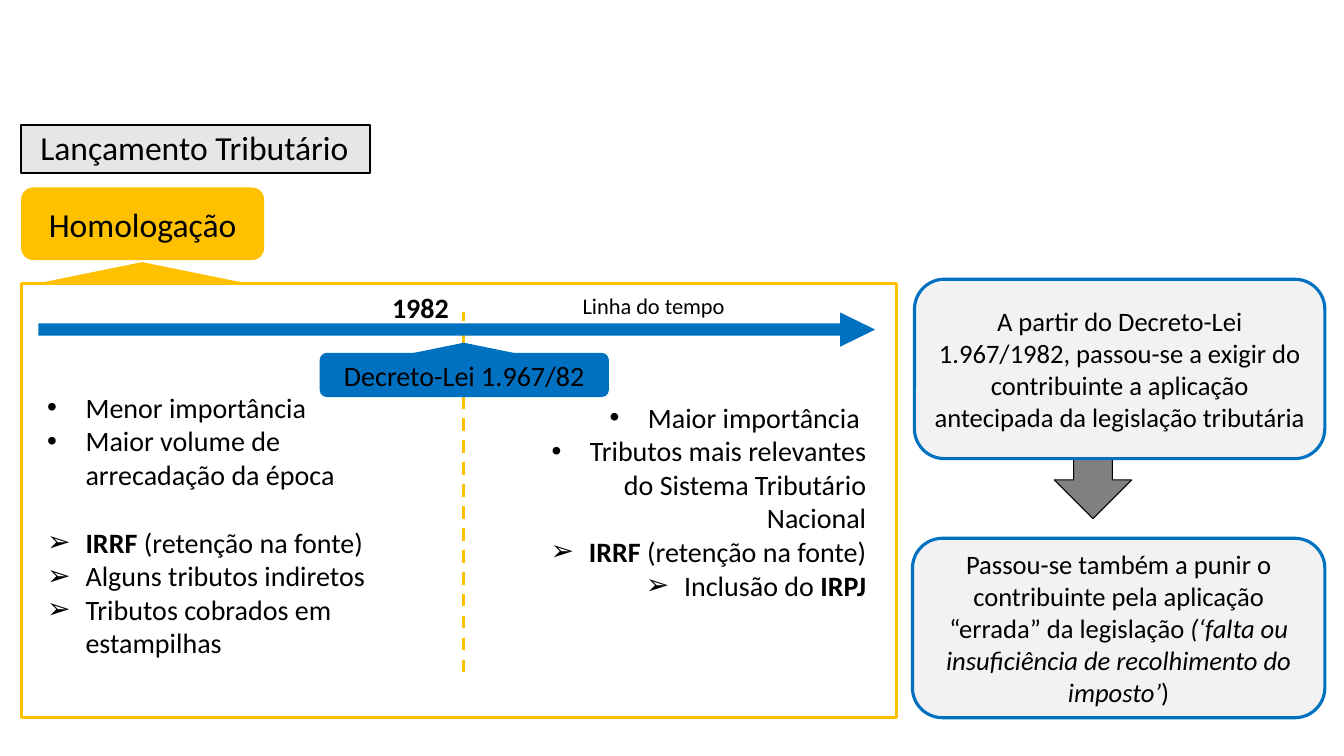
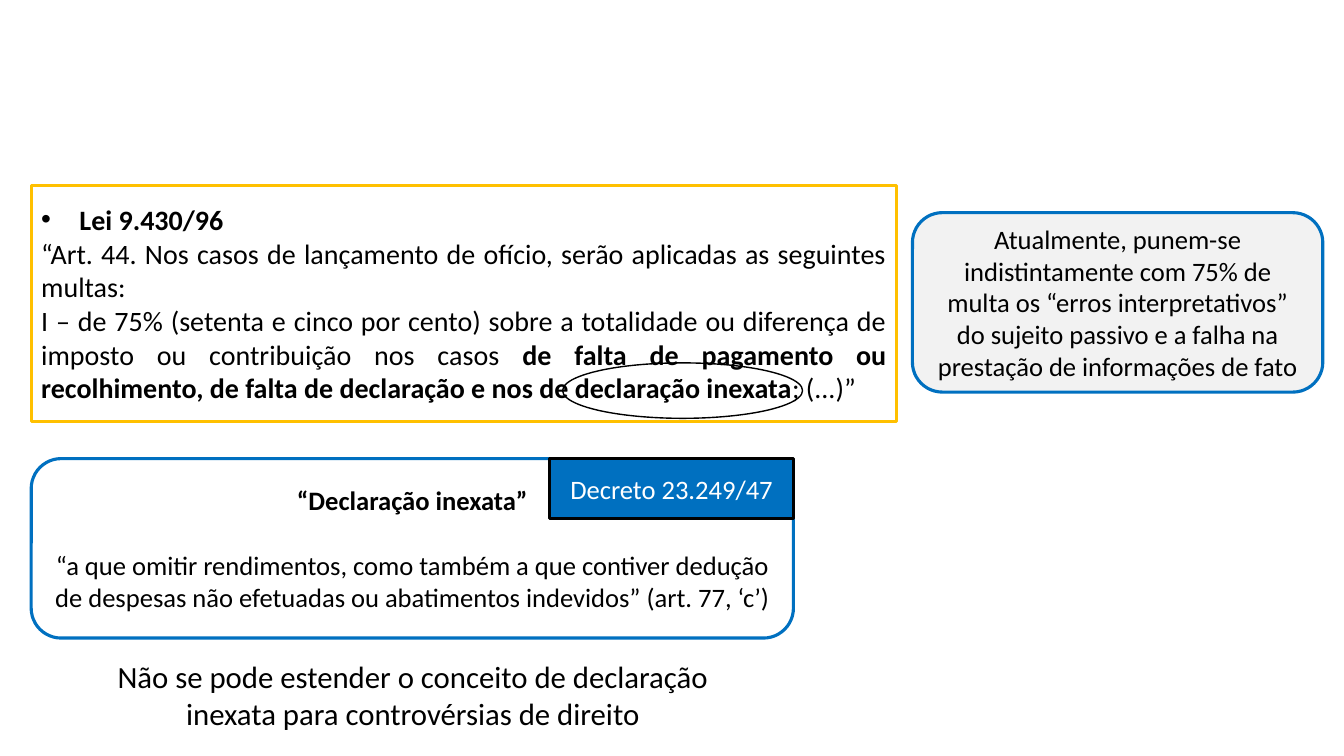
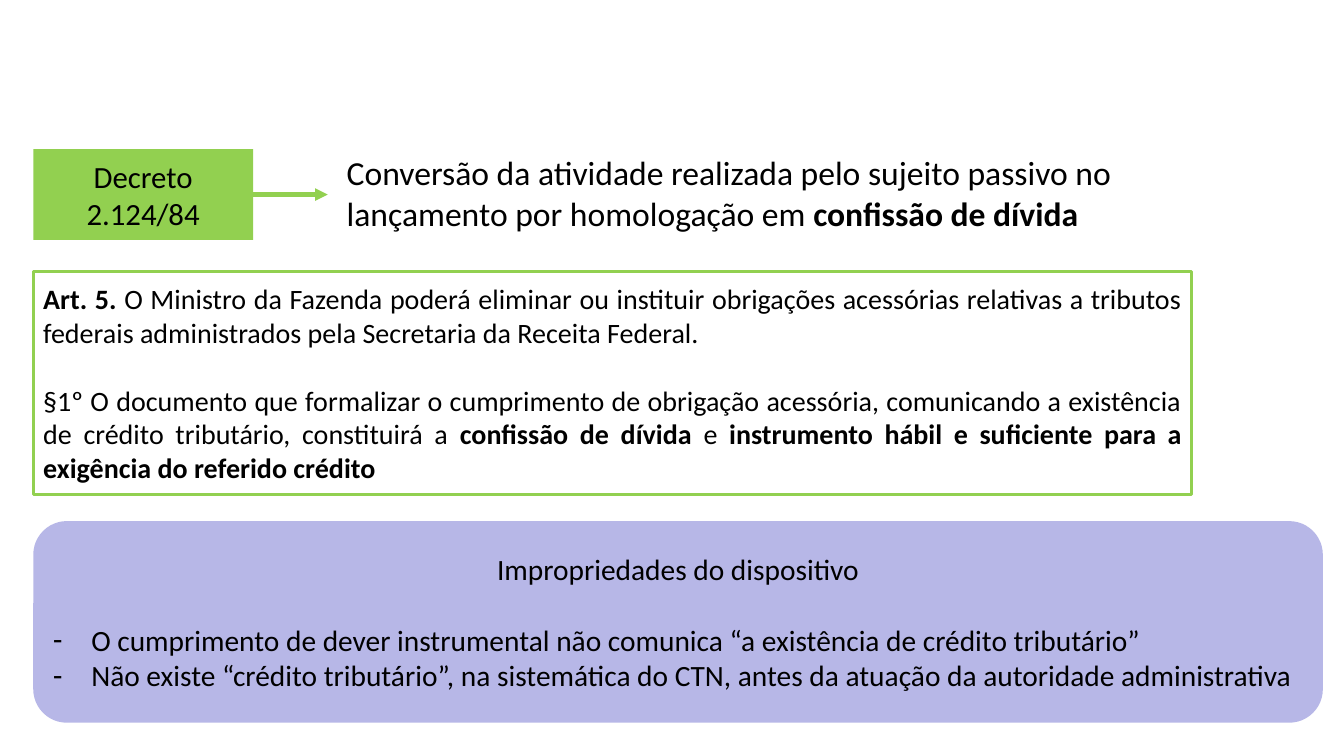
from dataclasses import dataclass

from lxml.etree import SubElement
from pptx import Presentation
from pptx.dml.color import RGBColor
from pptx.enum.dml import MSO_LINE
from pptx.enum.shapes import MSO_CONNECTOR, MSO_SHAPE
from pptx.enum.text import MSO_ANCHOR, PP_ALIGN
from pptx.oxml.ns import qn
from pptx.shapes.connector import Connector
from pptx.util import Inches, Pt


@dataclass(frozen=True)
class Theme:
    font: str = "Calibri"
    ink: RGBColor = RGBColor(0, 0, 0)
    white: RGBColor = RGBColor(255, 255, 255)
    gold: RGBColor = RGBColor.from_string("FFC000")
    blue: RGBColor = RGBColor.from_string("0070C0")
    green: RGBColor = RGBColor.from_string("92D050")
    lilac: RGBColor = RGBColor.from_string("B7B7E7")
    gray: RGBColor = RGBColor.from_string("808080")
    silver: RGBColor = RGBColor.from_string("E7E6E6")
    pale: RGBColor = RGBColor.from_string("F2F2F2")
    title: int = 24
    lead: int = 22
    list: int = 21
    body: int = 20
    note: int = 19
    small: int = 16
    edge: float = 2.25
    leading: float = 1.22


@dataclass
class Para:
    text: str
    bullet: str = ""
    gap: bool = False
    align: PP_ALIGN = None


theme = Theme()
LEFT, CENTER, RIGHT, JUST = PP_ALIGN.LEFT, PP_ALIGN.CENTER, PP_ALIGN.RIGHT, PP_ALIGN.JUSTIFY
RECT, ROUND = MSO_SHAPE.RECTANGLE, MSO_SHAPE.ROUNDED_RECTANGLE


def box(slide, kind, at, fill=None, line=None, width=theme.edge):
    """Add a preset shape, or a text box when kind is None."""
    at = [Inches(n) for n in at]
    if kind is None:
        return slide.shapes.add_textbox(*at)
    shape = slide.shapes.add_shape(kind, *at)
    shape.shadow.inherit = False
    if fill is None:
        shape.fill.background()
    else:
        shape.fill.solid()
        shape.fill.fore_color.rgb = fill
    if line is None:
        shape.line.fill.background()
    else:
        shape.line.color.rgb = line
        shape.line.width = Pt(width)
    return shape


def write(shape, size, paras, align=CENTER, color=theme.ink, anchor=MSO_ANCHOR.MIDDLE, wrap=True):
    """Fill a shape with text; *stars* mark bold and _underscores_ italic."""
    frame = shape.text_frame
    frame.word_wrap = wrap
    frame.vertical_anchor = anchor
    for i, para in enumerate(paras):
        p = frame.add_paragraph() if i else frame.paragraphs[0]
        p.alignment = para.align or align
        if para.gap:
            p.space_before = Pt(round(size * theme.leading, 1))
        if para.bullet:
            props = p._p.get_or_add_pPr()
            props.set("marL", str(Inches(0.38)))
            props.set("indent", str(-Inches(0.38)))
            SubElement(props, qn("a:buFont")).set("typeface", "Arial")
            SubElement(props, qn("a:buChar")).set("char", para.bullet)
        p.font.name = theme.font
        p.font.size = Pt(size)
        p.font.color.rgb = color
        for j, chunk in enumerate(para.text.split("*")):
            for k, part in enumerate(chunk.split("_")):
                if part:
                    run = p.add_run()
                    run.text = part
                    if j % 2:
                        run.font.bold = True
                    if k % 2:
                        run.font.italic = True


deck = Presentation()
deck.slide_width, deck.slide_height = Inches(13.33), Inches(7.5)
first, second, third = [deck.slides.add_slide(deck.slide_layouts[6]) for _ in range(3)]

# Slide 1: timeline of the assessment by homologation
split = first.shapes.add_connector(
    MSO_CONNECTOR.STRAIGHT, Inches(4.6), Inches(6.67), Inches(4.6), Inches(3.1))
split.line.color.rgb = theme.gold
split.line.width = Pt(theme.edge)
split.line.dash_style = MSO_LINE.DASH

box(first, MSO_SHAPE.ISOSCELES_TRIANGLE, (3.57, 3.4, 2.06, 0.21), theme.blue)
down = box(first, MSO_SHAPE.STRIPED_RIGHT_ARROW, (10.35, 4.27, 0.98, 0.77),
           theme.gray, theme.ink, 0.75)
down.rotation = 90
write(box(first, ROUND, (0.21, 1.86, 2.41, 0.72), theme.gold),
      theme.title, [Para("Homologação")])
topic = box(first, RECT, (0.21, 1.24, 3.46, 0.48), theme.silver, theme.ink, 1.5)
write(topic, theme.title, [Para("Lançamento Tributário")], LEFT)
topic.text_frame.margin_left = Inches(0.19)
topic.text_frame.margin_top = topic.text_frame.margin_bottom = Inches(0.03)
topic.text_frame.margin_right = Inches(0.03)
topic.text_frame.paragraphs[0].line_spacing = 0.9
box(first, MSO_SHAPE.ISOSCELES_TRIANGLE, (0.38, 2.6, 2.06, 0.21), theme.gold)
box(first, RECT, (0.21, 2.81, 8.68, 4.31), line=theme.gold)
time = box(first, MSO_SHAPE.RIGHT_ARROW, (0.38, 3.1, 8.3, 0.34), theme.blue)
time.adjustments[0], time.adjustments[1] = 0.36, 1.02
write(box(first, ROUND, (3.17, 3.5, 2.87, 0.44), theme.blue),
      theme.body, [Para("Decreto-Lei 1.967/82")])

for at, size, text in [
    ((3.79, 2.83, 0.77, 0.44), theme.body, "*1982*"),
    ((5.68, 2.85, 1.63, 0.37), theme.small, "Linha do tempo"),
]:
    write(box(first, None, at), size, [Para(text)], LEFT, anchor=MSO_ANCHOR.TOP, wrap=False)

before = [
    Para("Menor importância", "•"),
    Para("Maior volume de arrecadação da época", "•"),
    Para("*IRRF *(retenção na fonte)", "➢", gap=True),
    Para("Alguns tributos indiretos", "➢"),
    Para("Tributos cobrados em estampilhas", "➢"),
]
after = [
    Para("Maior importância ", "•"),
    Para("Tributos mais relevantes do Sistema Tributário Nacional", "•"),
    Para("*IRRF* (retenção na fonte)", "➢"),
    Para("Inclusão do *IRPJ*", "➢"),
]
for at, paras, align in [
    ((0.37, 3.82, 3.38, 2.79), before, LEFT),
    ((5.28, 3.92, 3.41, 2.12), after, RIGHT),
]:
    write(box(first, None, at), theme.body, paras, align, anchor=MSO_ANCHOR.TOP)

# Side notes of slides 1 and 2
for slide, at, text in [
    (first, (9.07, 2.77, 4.07, 1.78),
     "A partir do Decreto-Lei 1.967/1982, passou-se a exigir do contribuinte "
     "a aplicação antecipada da legislação tributária"),
    (first, (9.05, 5.34, 4.09, 1.78),
     "Passou-se também a punir o contribuinte pela aplicação “errada” da legislação "
     "_(‘falta ou insuficiência de recolhimento do imposto’_)"),
    (second, (9.05, 2.11, 4.07, 1.78),
     "Atualmente, punem-se indistintamente com 75% de multa os “erros interpretativos” "
     "do sujeito passivo e a falha na prestação de informações de fato"),
]:
    write(box(slide, ROUND, at, theme.pale, theme.blue), theme.note, [Para(text)])

# Slide 2: fines and the inexact return
write(box(second, RECT, (0.31, 1.84, 8.58, 2.34), line=theme.gold), theme.body, [
    Para("*Lei 9.430/96 *", "•"),
    Para("“Art. 44. Nos casos de lançamento de ofício, serão aplicadas as seguintes multas:"),
    Para("I – de 75% (setenta e cinco por cento) sobre a totalidade ou diferença de imposto "
         "ou contribuição nos casos *de falta de pagamento ou recolhimento, de falta de "
         "declaração e nos de declaração inexata*; (...)”"),
], JUST)
write(box(second, ROUND, (0.31, 4.55, 7.56, 1.78), line=theme.blue), theme.note, [
    Para("*“Declaração inexata”*"),
    Para("“a que omitir rendimentos, como também a que contiver dedução de despesas "
         "não efetuadas ou abatimentos indevidos” (art. 77, ‘c’)", gap=True),
])
write(box(second, RECT, (5.45, 4.55, 2.42, 0.59), theme.blue, theme.ink),
      theme.note, [Para("Decreto 23.249/47")], color=theme.white)
box(second, MSO_SHAPE.OVAL, (5.58, 3.6, 2.38, 0.55), line=theme.ink, width=1)
write(box(second, None, (0.76, 6.48, 6.67, 0.84)), theme.lead, [
    Para("Não se pode estender o conceito de declaração inexata para controvérsias de direito"),
], anchor=MSO_ANCHOR.TOP)

# Slide 3: confession of debt
write(box(third, RECT, (0.33, 2.69, 11.49, 2.22), line=theme.green), theme.body, [
    Para("*Art. 5. *O Ministro da Fazenda poderá eliminar ou instituir obrigações acessórias "
         "relativas a tributos federais administrados pela Secretaria da Receita Federal. "),
    Para("§1º O documento que formalizar o cumprimento de obrigação acessória, comunicando "
         "a existência de crédito tributário, constituirá a *confissão de dívida *e "
         "*instrumento hábil e suficiente para a exigência do referido crédito*", gap=True),
], JUST)
decree = box(third, RECT, (0.33, 1.48, 2.18, 0.9), theme.green)
write(decree, theme.lead, [Para("Decreto 2.124/84")])
arrow = third.shapes.add_connector(
    MSO_CONNECTOR.STRAIGHT, Inches(2.51), Inches(1.93), Inches(3.25), Inches(1.93))
arrow.begin_connect(decree, 3)
arrow.line.color.rgb = theme.green
arrow.line.width = Pt(3)
SubElement(arrow.line._get_or_add_ln(), qn("a:tailEnd")).set("type", "triangle")
write(box(third, None, (3.34, 1.46, 8.49, 0.91)), theme.title, [
    Para("Conversão da atividade realizada pelo sujeito passivo no lançamento "
         "por homologação em *confissão de dívida*"),
], LEFT, anchor=MSO_ANCHOR.TOP)
write(box(third, ROUND, (0.33, 5.17, 12.79, 2), theme.lilac), theme.list, [
    Para("Impropriedades do dispositivo", align=CENTER),
    Para("O cumprimento de dever instrumental não comunica “a existência de crédito tributário”",
         "-", gap=True),
    Para("Não existe “crédito tributário”, na sistemática do CTN, "
         "antes da atuação da autoridade administrativa", "-"),
], JUST)

for slide in deck.slides:
    for shape in slide.shapes:
        if isinstance(shape, Connector):
            SubElement(shape._element.spPr, qn("a:effectLst"))

deck.save("out.pptx")
